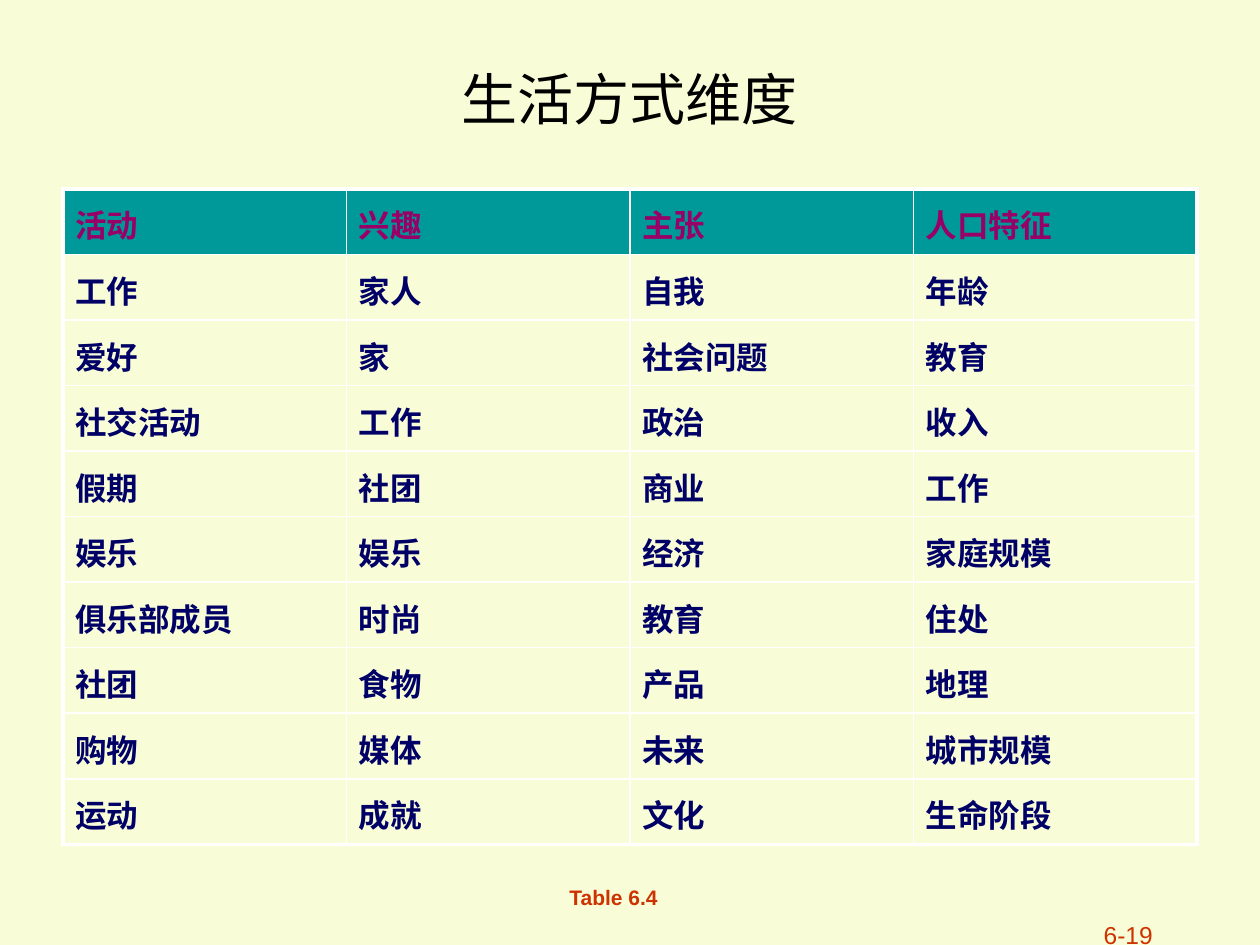
from dataclasses import dataclass

from lxml import etree
from pptx import Presentation
from pptx.dml.color import RGBColor
from pptx.enum.text import MSO_ANCHOR, MSO_AUTO_SIZE, PP_ALIGN
from pptx.oxml.ns import qn
from pptx.slide import Slide
from pptx.util import Cm, Pt

LEFT, CENTER, RIGHT = PP_ALIGN.LEFT, PP_ALIGN.CENTER, PP_ALIGN.RIGHT
TOP, MIDDLE = MSO_ANCHOR.TOP, MSO_ANCHOR.MIDDLE
NO_FIT, GROW = MSO_AUTO_SIZE.NONE, MSO_AUTO_SIZE.SHAPE_TO_FIT_TEXT

FONT = "Arial"
COLORS = {
    "background": "F9FDD7",
    "title": "000000",
    "header_fill": "009999",
    "header_text": "990066",
    "body_text": "000066",
    "border": "FFFFFF",
    "accent": "CC3300",
}
INNER, OUTER = 1, 2.25
CONTENT_LEFT, CONTENT_WIDTH = 1.27, 22.86

ROWS = [
    ("活动", "兴趣", "主张", "人口特征"),
    ("工作", "家人", "自我", "年龄"),
    ("爱好", "家", "社会问题", "教育"),
    ("社交活动", "工作", "政治", "收入"),
    ("假期", "社团", "商业", "工作"),
    ("娱乐", "娱乐", "经济", "家庭规模"),
    ("俱乐部成员", "时尚", "教育", "住处"),
    ("社团", "食物", "产品", "地理"),
    ("购物", "媒体", "未来", "城市规模"),
    ("运动", "成就", "文化", "生命阶段"),
]


@dataclass
class Label:
    text: str
    left: float
    top: float
    width: float
    height: float
    size: int
    bold: bool = False
    align: int = LEFT
    anchor: int = TOP
    inset: float = 0.13
    wrap: bool = True
    fit: int = NO_FIT


LABELS = [
    Label("6-19", 18.21, 18.21, 5.28, 1.27, 14,
          align=RIGHT, anchor=MIDDLE, wrap=False),
    Label("Table 6.4", 11.23, 17.58, 2.51, 1.78, 12,
          bold=True, inset=0.64, fit=GROW),
]


def add_run(p, text: str, size: int, color: str, bold: bool = False) -> None:
    r = p.add_run()
    r.text = text
    r.font.name = FONT
    r.font.size = Pt(size)
    r.font.bold = bold
    r.font.color.rgb = RGBColor.from_string(COLORS[color])


def add_title(s: Slide, text: str) -> None:
    sp = s.shapes.title
    sp.left, sp.top = Cm(CONTENT_LEFT), Cm(0.78)
    sp.width, sp.height = Cm(CONTENT_WIDTH), Cm(2.41)
    tf = sp.text_frame
    tf.vertical_anchor = MIDDLE
    p = tf.paragraphs[0]
    p.alignment = CENTER
    add_run(p, text, 32, "title")


def add_label(s: Slide, label: Label) -> None:
    sp = s.shapes.add_textbox(Cm(label.left), Cm(label.top),
                              Cm(label.width), Cm(label.height))
    tf = sp.text_frame
    tf.word_wrap = label.wrap
    tf.auto_size = label.fit
    tf.vertical_anchor = label.anchor
    tf.margin_top = tf.margin_bottom = Cm(label.inset)
    p = tf.paragraphs[0]
    p.alignment = label.align
    add_run(p, label.text, label.size, "accent", label.bold)


def set_borders(cell, widths: dict[str, float]) -> None:
    tc_pr = cell._tc.get_or_add_tcPr()
    for side, width in widths.items():
        ln = etree.SubElement(tc_pr, qn(f"a:ln{side}"), w=str(Pt(width)))
        fill = etree.SubElement(ln, qn("a:solidFill"))
        etree.SubElement(fill, qn("a:srgbClr"), val=COLORS["border"])


def set_space_before(p, percent: int) -> None:
    spacing = etree.SubElement(p._p.get_or_add_pPr(), qn("a:spcBef"))
    etree.SubElement(spacing, qn("a:spcPct"), val=str(percent * 1000))


def add_dimension_table(s: Slide, rows: list[tuple[str, ...]]) -> None:
    last_row, last_col = len(rows) - 1, len(rows[0]) - 1
    table = s.shapes.add_table(len(rows), len(rows[0]), Cm(CONTENT_LEFT), Cm(3.81),
                               Cm(CONTENT_WIDTH), Cm(13.21)).table
    for i, row in enumerate(rows):
        for j, text in enumerate(row):
            cell = table.cell(i, j)
            cell.margin_left = cell.margin_right = Cm(0.25)
            cell.margin_top = cell.margin_bottom = Cm(0.25)
            set_borders(cell, {
                "L": OUTER if j == 0 else INNER,
                "R": OUTER if j == last_col else INNER,
                "T": OUTER if i == 0 else INNER,
                "B": OUTER if i == last_row else INNER,
            })
            if i == 0:
                cell.fill.solid()
                cell.fill.fore_color.rgb = RGBColor.from_string(COLORS["header_fill"])
            else:
                cell.fill.background()
            p = cell.text_frame.paragraphs[0]
            set_space_before(p, 40)
            add_run(p, text, 18, "header_text" if i == 0 else "body_text", True)


def main() -> None:
    prs = Presentation()
    prs.slide_width, prs.slide_height = Cm(25.4), Cm(19.05)
    s = prs.slides.add_slide(prs.slide_layouts[5])
    s.background.fill.solid()
    s.background.fill.fore_color.rgb = RGBColor.from_string(COLORS["background"])
    add_title(s, "生活方式维度")
    for label in LABELS:
        add_label(s, label)
    add_dimension_table(s, ROWS)
    prs.save("out.pptx")


if __name__ == "__main__":
    main()
